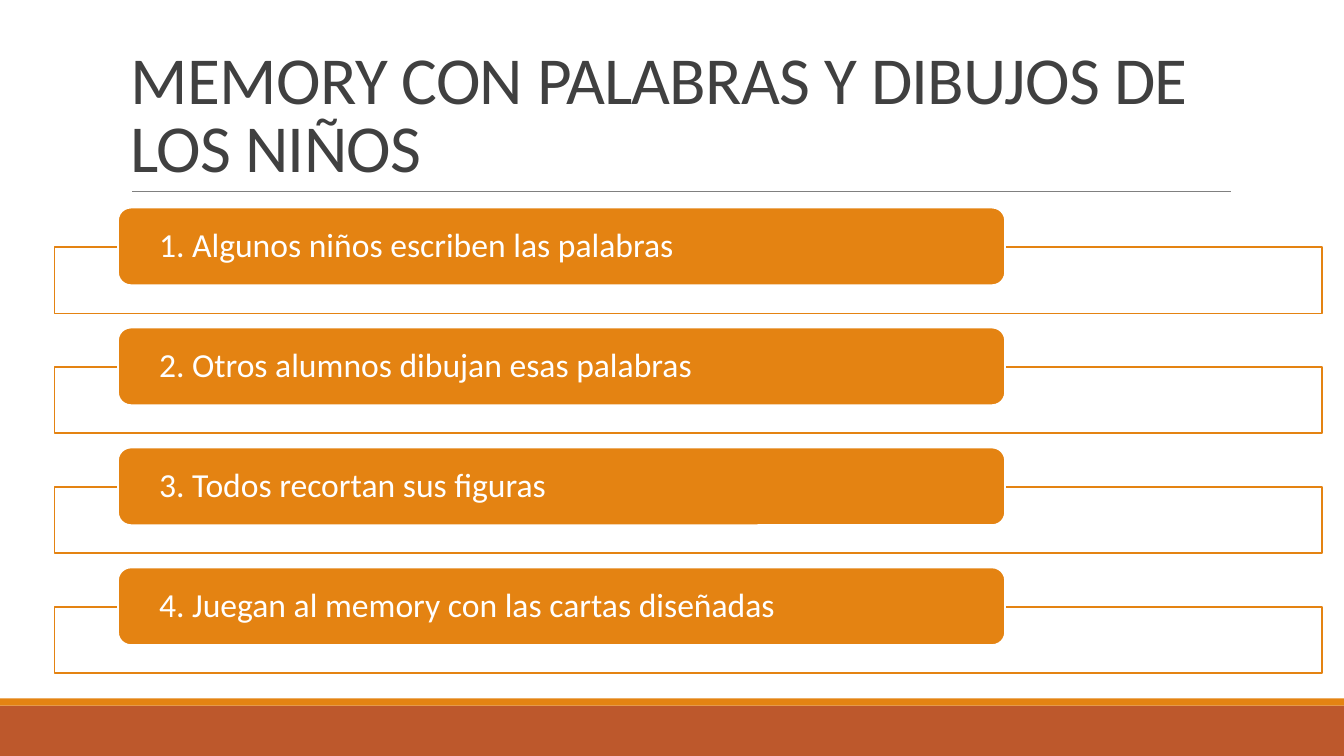
from lxml.etree import SubElement
from pptx import Presentation
from pptx.dml.color import RGBColor
from pptx.enum.shapes import MSO_CONNECTOR, MSO_SHAPE
from pptx.enum.text import MSO_ANCHOR, PP_ALIGN
from pptx.oxml.ns import qn
from pptx.util import Inches, Pt

COLORS = {
    "white": "FFFFFF",
    "orange": "E48312",
    "rust": "BD582C",
    "title": "404040",
    "rule": "808080",
}
STEPS = [
    "1. Algunos niños escriben las palabras",
    "2. Otros alumnos dibujan esas palabras",
    "3. Todos recortan sus figuras",
    "4. Juegan al memory con las cartas diseñadas",
]


def rgb(name):
    return RGBColor.from_string(COLORS[name])


def add_box(s, x, y, w, h, fill, line=None, shape=MSO_SHAPE.RECTANGLE):
    sp = s.shapes.add_shape(shape, Inches(x), Inches(y), Inches(w), Inches(h))
    sp.shadow.inherit = False
    sp.fill.solid()
    sp.fill.fore_color.rgb = rgb(fill)
    if line:
        sp.line.color.rgb = rgb(line)
        sp.line.width = Pt(1.25)
    else:
        sp.line.fill.background()
    return sp


def set_text(sp, text, *, size, color, anchor, spacing, inset_x, inset_y, tracking=0):
    tf = sp.text_frame
    tf.word_wrap = True
    tf.vertical_anchor = anchor
    tf.margin_left = tf.margin_right = Inches(inset_x)
    tf.margin_top = tf.margin_bottom = Inches(inset_y)
    p = tf.paragraphs[0]
    p.alignment = PP_ALIGN.LEFT
    p.line_spacing = spacing
    r = p.add_run()
    r.text = text
    r.font.name = "Calibri"
    r.font.size = Pt(size)
    r.font.color.rgb = rgb(color)
    if tracking:
        r.font._element.set("spc", str(int(tracking * 100)))


def add_footer(s, x, y, w, h, stripe=0.07):
    add_box(s, x, y + stripe, w, h - stripe, "rust")
    add_box(s, x, y, w, stripe, "orange")


def add_title(s, x, y, w, h):
    line = s.shapes.add_connector(
        MSO_CONNECTOR.STRAIGHT,
        Inches(x + 0.11), Inches(y + h), Inches(x + w + 0.01), Inches(y + h),
    )
    line.line.color.rgb = rgb("rule")
    line.line.width = Pt(0.5)
    SubElement(line._element.spPr, qn("a:effectLst"))
    sp = s.shapes.add_textbox(Inches(x), Inches(y), Inches(w), Inches(h))
    set_text(sp, "MEMORY CON PALABRAS Y DIBUJOS DE LOS NIÑOS", size=48,
             color="title", anchor=MSO_ANCHOR.BOTTOM, spacing=0.85,
             inset_x=0.1, inset_y=0.05, tracking=-0.5)


def add_steps(s, x, y, w, pitch=1.19):
    for i, text in enumerate(STEPS):
        top = y + i * pitch
        add_box(s, x, top + 0.39, w, 0.66, "white", "orange")
        label = add_box(s, x + 0.63, top, 0.7 * w, 0.77, "orange", "white",
                        MSO_SHAPE.ROUNDED_RECTANGLE)
        set_text(label, text, size=24, color="white", anchor=MSO_ANCHOR.MIDDLE,
                 spacing=0.9, inset_x=0.37, inset_y=0.04)


def main():
    prs = Presentation()
    prs.slide_width, prs.slide_height = Inches(13.33), Inches(7.5)
    s = prs.slides.add_slide(prs.slide_layouts[6])
    add_footer(s, 0, 6.93, 13.33, 0.57)
    add_title(s, 1.2, 0.31, 11, 1.59)
    add_steps(s, 0.54, 2.06, 12.57)
    prs.save("out.pptx")


if __name__ == "__main__":
    main()
